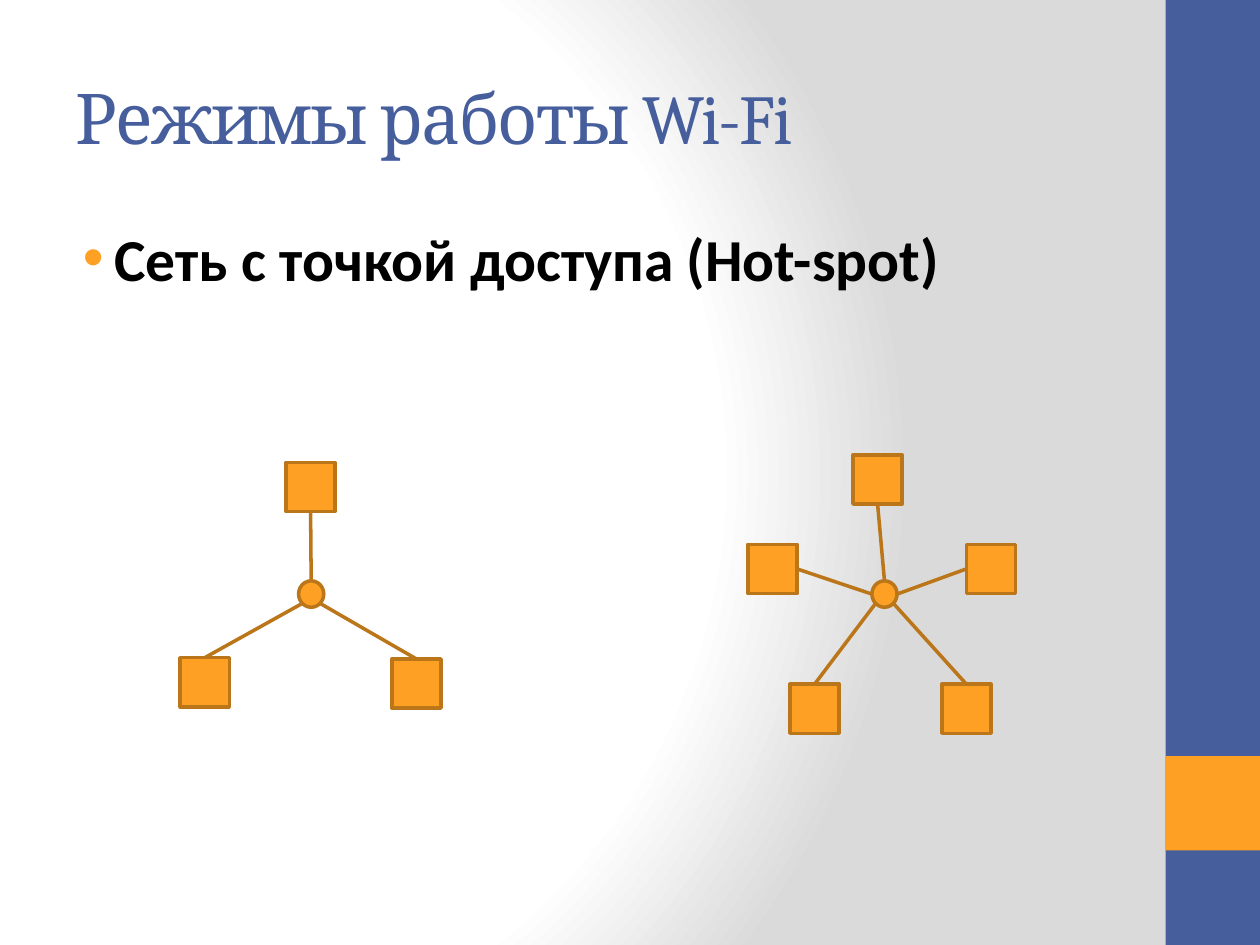
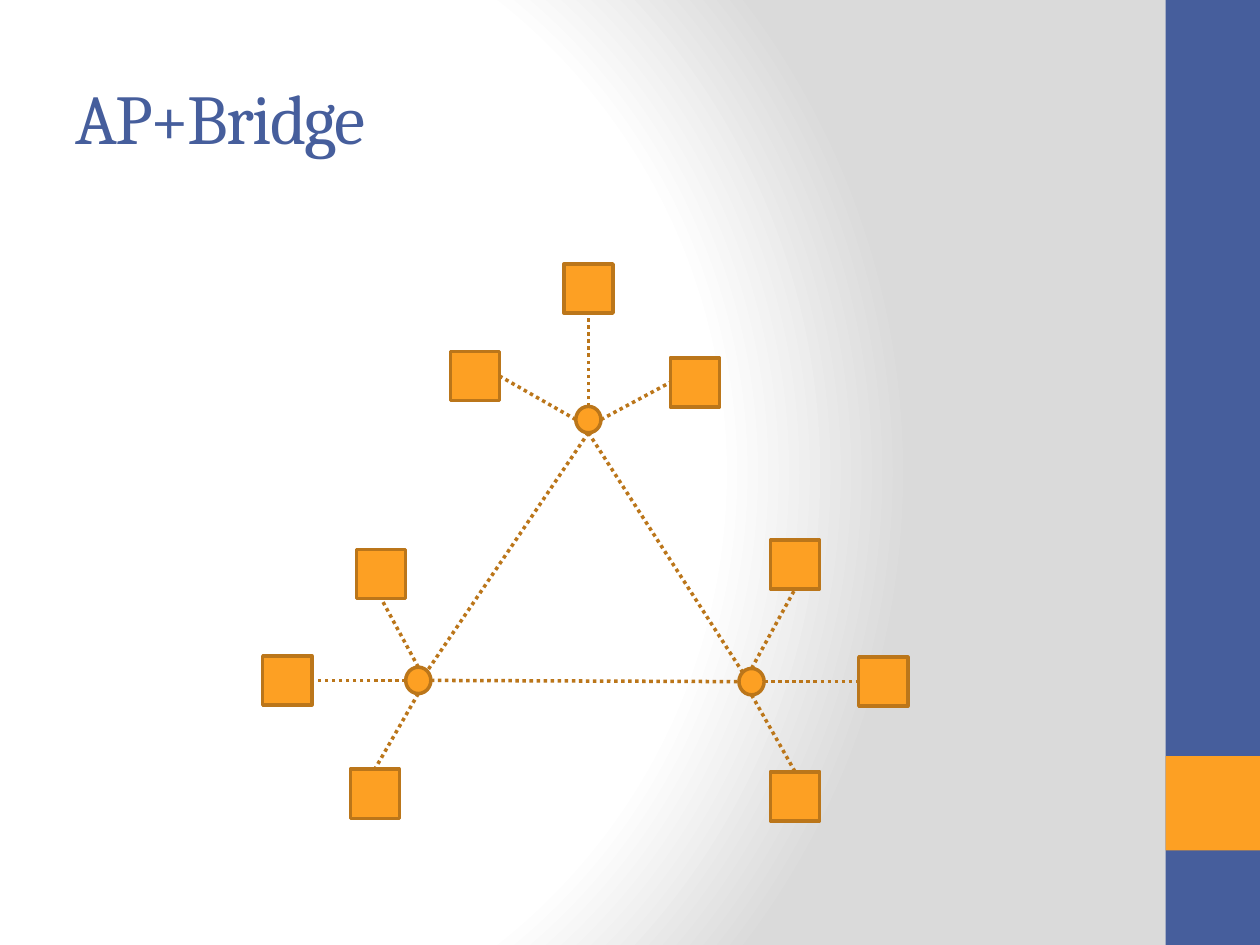
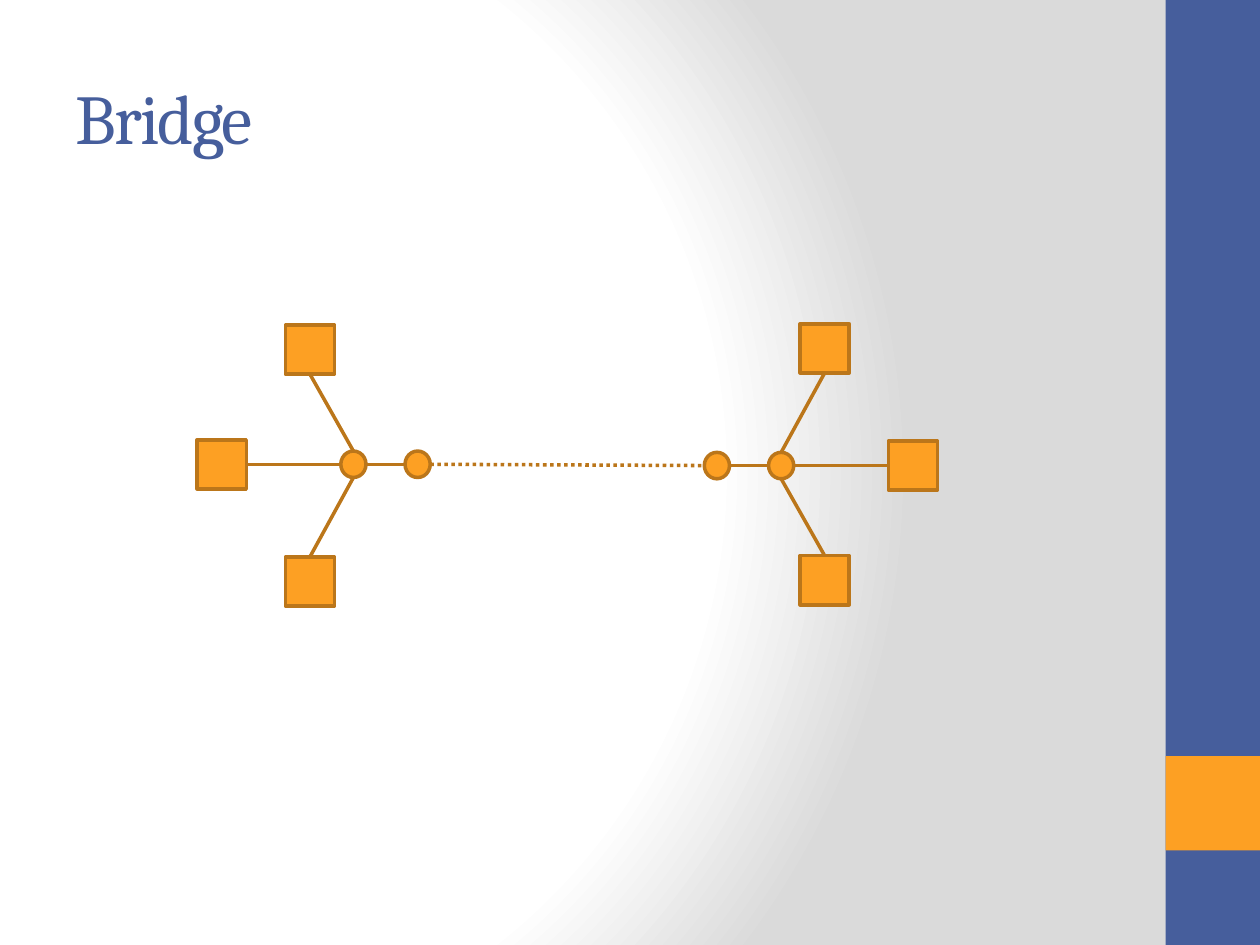
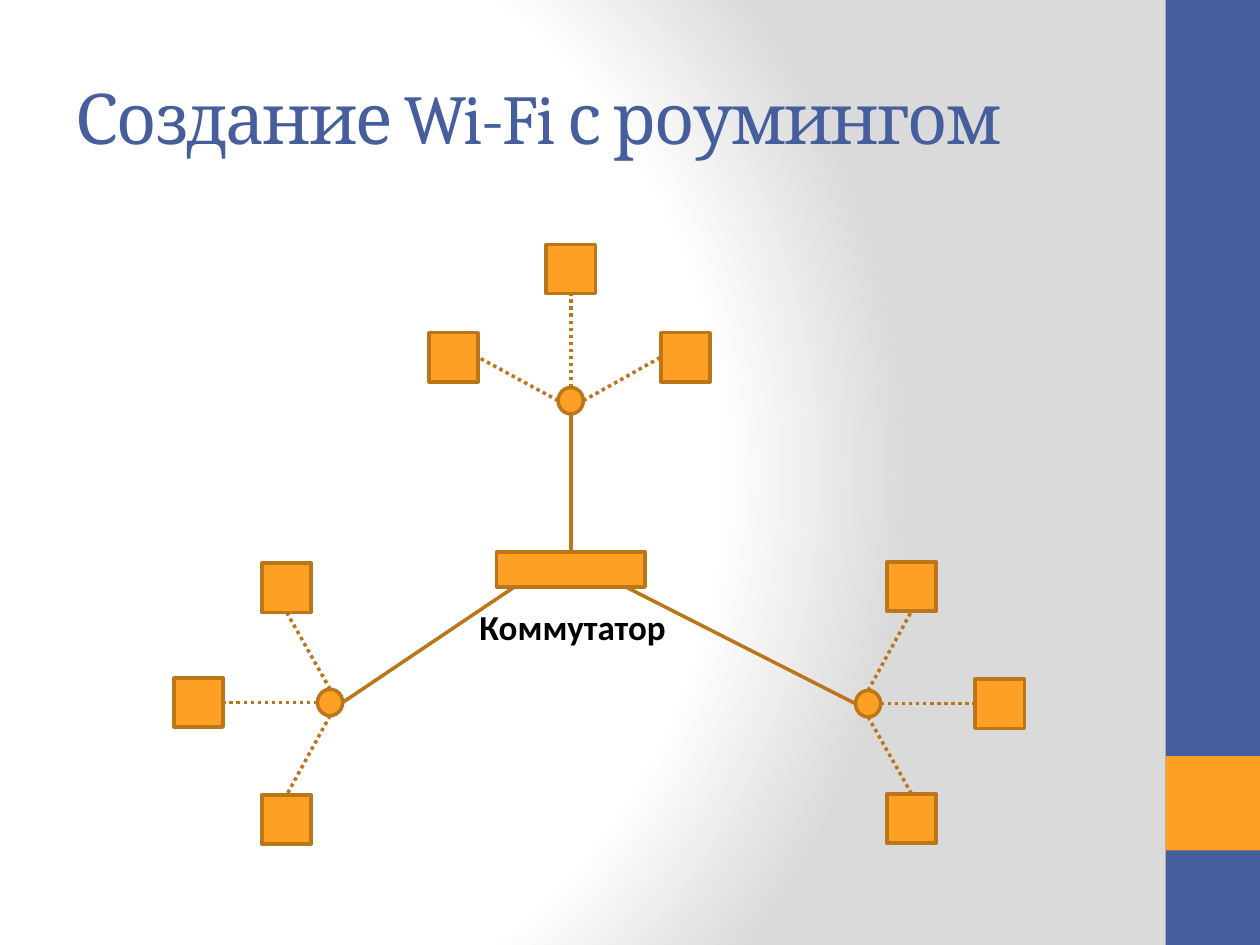
from math import cos, radians, sin

from lxml.etree import SubElement
from pptx import Presentation
from pptx.dml.color import RGBColor
from pptx.enum.dml import MSO_LINE
from pptx.enum.shapes import MSO_CONNECTOR, MSO_SHAPE
from pptx.enum.text import MSO_ANCHOR, MSO_AUTO_SIZE, PP_ALIGN
from pptx.oxml import parse_xml
from pptx.oxml.ns import nsdecls, qn
from pptx.util import Inches, Pt

COLORS = {
    "blue": "465E9C",
    "orange": "FDA023",
    "outline": "BB761A",
    "text": "000000",
    "light": "FFFFFF",
    "shade": "DADADA",
}
COLUMNS, ROWS = 20, 15
TOP, LEFT, BOTTOM, RIGHT = range(4)
SITES = {
    "top": 0, "top left": 1, "left": 2, "bottom left": 3,
    "bottom": 4, "bottom right": 5, "right": 6, "top right": 7,
}
SQUARE = 0.78
HUB = (0.4, 0.42)
FAN = ((-2.09, 0, RIGHT), (-0.69, 1.86, TOP), (-0.69, -1.82, BOTTOM))
NARROW_FAN = ((-2.08, 0, RIGHT), (-0.69, 1.8, TOP), (-0.59, -1.69, BOTTOM))


def hub_point(hub, site):
    angle = radians(45 * SITES[site])
    return hub[0] - HUB[0] / 2 * sin(angle), hub[1] - HUB[1] / 2 * cos(angle)


class Deck:
    def __init__(self):
        self.presentation = Presentation()
        self.presentation.slide_width = Inches(10)
        self.presentation.slide_height = Inches(7.5)
        self.column = self.presentation.slide_width // COLUMNS
        self.row = self.presentation.slide_height // ROWS
        self.slide = None
        self.set_background()

    def set_background(self):
        master = self.presentation.slide_master
        master.background.fill.gradient()
        gradient = master.element.find(".//" + qn("a:gradFill"))
        stops = "".join(
            f'<a:gs pos="{share * 1000}"><a:srgbClr val="{COLORS[color]}"/></a:gs>'
            for share, color in ((0, "light"), (75, "light"), (100, "shade"))
        )
        gradient.getparent().replace(gradient, parse_xml(
            f'<a:gradFill {nsdecls("a")} rotWithShape="1"><a:gsLst>{stops}</a:gsLst>'
            '<a:path path="circle">'
            '<a:fillToRect l="20000" t="50000" r="100000" b="50000"/>'
            '</a:path></a:gradFill>'
        ))

    def place(self, x, y):
        return round(x * self.column), round(y * self.row)

    def add_slide(self, title):
        layout = self.presentation.slide_layouts[6]
        self.slide = self.presentation.slides.add_slide(layout)
        self.shape(MSO_SHAPE.RECTANGLE, (18.5, 0), (1.5, ROWS), "blue")
        self.shape(MSO_SHAPE.RECTANGLE, (18.5, 12), (1.5, 1.5), "orange")
        frame = self.text(title, (1, 0.6), (16.66, 2.5), 40, "Cambria", "blue")
        frame.vertical_anchor = MSO_ANCHOR.MIDDLE
        frame.paragraphs[0].runs[0].font._element.set("spc", "-100")

    def shape(self, kind, corner, size, fill, outline=None):
        shape = self.slide.shapes.add_shape(kind, *self.place(*corner), *self.place(*size))
        shape.shadow.inherit = False
        shape.fill.solid()
        shape.fill.fore_color.rgb = RGBColor.from_string(COLORS[fill])
        if outline:
            self.style_line(shape.line, outline)
        else:
            shape.line.fill.background()
        return shape

    def style_line(self, line, color="outline"):
        line.color.rgb = RGBColor.from_string(COLORS[color])
        line.width = Pt(2)

    def text(self, text, corner, size, points, font_name, color, bold=False):
        box = self.slide.shapes.add_textbox(*self.place(*corner), *self.place(*size))
        frame = box.text_frame
        frame.word_wrap = True
        frame.text = text
        font = frame.paragraphs[0].runs[0].font
        font.name, font.size, font.bold = font_name, Pt(points), bold
        font.color.rgb = RGBColor.from_string(COLORS[color])
        return frame

    def bullet(self, text):
        frame = self.text(text, (0.86, 3.42), (17.5, 10.5), 34, "Calibri", "text", True)
        paragraph = frame.paragraphs[0]
        paragraph.space_before = Pt(6.8)
        properties = paragraph._p.get_or_add_pPr()
        properties.set("marL", str(Inches(0.38)))
        properties.set("indent", str(Inches(-0.25)))
        color = SubElement(properties, qn("a:buClr"))
        SubElement(color, qn("a:srgbClr")).set("val", COLORS["orange"])
        SubElement(properties, qn("a:buFont")).set("typeface", "Arial")
        SubElement(properties, qn("a:buChar")).set("char", "•")

    def label(self, text, corner, size):
        frame = self.text(text, corner, size, 20, "Calibri", "text", True)
        frame.auto_size = MSO_AUTO_SIZE.SHAPE_TO_FIT_TEXT
        frame.paragraphs[0].alignment = PP_ALIGN.CENTER

    def node(self, kind, center, size):
        corner = (center[0] - size[0] / 2, center[1] - size[1] / 2)
        return self.shape(kind, corner, size, "orange", "outline")

    def box(self, center, size=(SQUARE, SQUARE)):
        return self.node(MSO_SHAPE.RECTANGLE, center, size)

    def hub(self, center):
        return self.node(MSO_SHAPE.OVAL, center, HUB)

    def link(self, start, end, dotted=False):
        connector = self.slide.shapes.add_connector(
            MSO_CONNECTOR.STRAIGHT, *self.place(*start), *self.place(*end))
        self.style_line(connector.line)
        if dotted:
            connector.line.dash_style = MSO_LINE.ROUND_DOT
        SubElement(connector._element.spPr, qn("a:effectLst"))
        return connector

    def link_to_box(self, start, box, side, dotted=False):
        self.link(start, start, dotted).end_connect(box, side)

    def star(self, hub, spokes, dotted=False):
        for center, side, site in spokes:
            self.link_to_box(hub_point(hub, site), self.box(center), side, dotted)
        self.hub(hub)

    def fan(self, hub, turns=0, dotted=False, offsets=FAN):
        spokes = []
        for x, y, side in offsets:
            for _ in range(turns):
                x, y, side = -y, x, (side - 1) % 4
            site = ("bottom", "right", "top", "left")[side]
            spokes.append(((hub[0] + x, hub[1] + y), side, site))
        self.star(hub, spokes, dotted)


def add_hot_spot(deck):
    deck.add_slide("Режимы работы Wi-Fi")
    deck.bullet("Сеть с точкой доступа (Hot-spot)")
    deck.star((4.94, 9.43), (
        ((4.93, 7.73), BOTTOM, "top"),
        ((3.25, 10.83), TOP, "bottom left"),
        ((6.61, 10.85), TOP, "bottom right"),
    ))
    deck.star((14.04, 9.43), (
        ((13.93, 7.61), BOTTOM, "top"),
        ((12.26, 9.03), RIGHT, "left"),
        ((15.73, 9.03), LEFT, "right"),
        ((12.93, 11.25), TOP, "bottom left"),
        ((15.34, 11.25), TOP, "bottom right"),
    ))


def add_access_point_bridge(deck):
    deck.add_slide("AP+Bridge")
    left, top, right = (6.64, 10.8), (9.34, 6.66), (11.93, 10.82)
    deck.fan(left, 0, True, NARROW_FAN)
    deck.fan(top, 1, True, NARROW_FAN)
    deck.fan(right, 2, True)
    for start, start_site, end, end_site in (
        (top, "bottom", left, "top right"),
        (top, "bottom", right, "top left"),
        (left, "right", right, "left"),
    ):
        deck.link(hub_point(start, start_site), hub_point(end, end_site), True)


def add_bridge(deck):
    deck.add_slide("Bridge")
    hubs = (5.61, 7.37), (6.63, 7.37), (11.38, 7.39), (12.4, 7.39)
    deck.fan(hubs[0])
    deck.fan(hubs[3], 2)
    for hub in hubs[1:3]:
        deck.hub(hub)
    for start, end, dotted in zip(hubs, hubs[1:], (False, True, False)):
        deck.link(hub_point(start, "right"), hub_point(end, "left"), dotted)


def add_roaming(deck):
    deck.add_slide("Создание Wi-Fi с роумингом")
    left, top, right = (5.24, 11.15), (9.06, 6.36), (13.78, 11.17)
    for turns, hub in enumerate((left, top, right)):
        deck.fan(hub, turns, True)
    deck.link(hub_point(left, "right"), (8.22, 9.28))
    deck.link((9.86, 9.28), hub_point(right, "left"))
    switch = deck.box((9.06, 9.04), (2.36, 0.56))
    deck.link_to_box(hub_point(top, "bottom"), switch, TOP)
    deck.label("Коммутатор", (7.32, 9.52), (3.54, 0.88))


def main():
    deck = Deck()
    add_hot_spot(deck)
    add_access_point_bridge(deck)
    add_bridge(deck)
    add_roaming(deck)
    deck.presentation.save("out.pptx")


if __name__ == "__main__":
    main()
